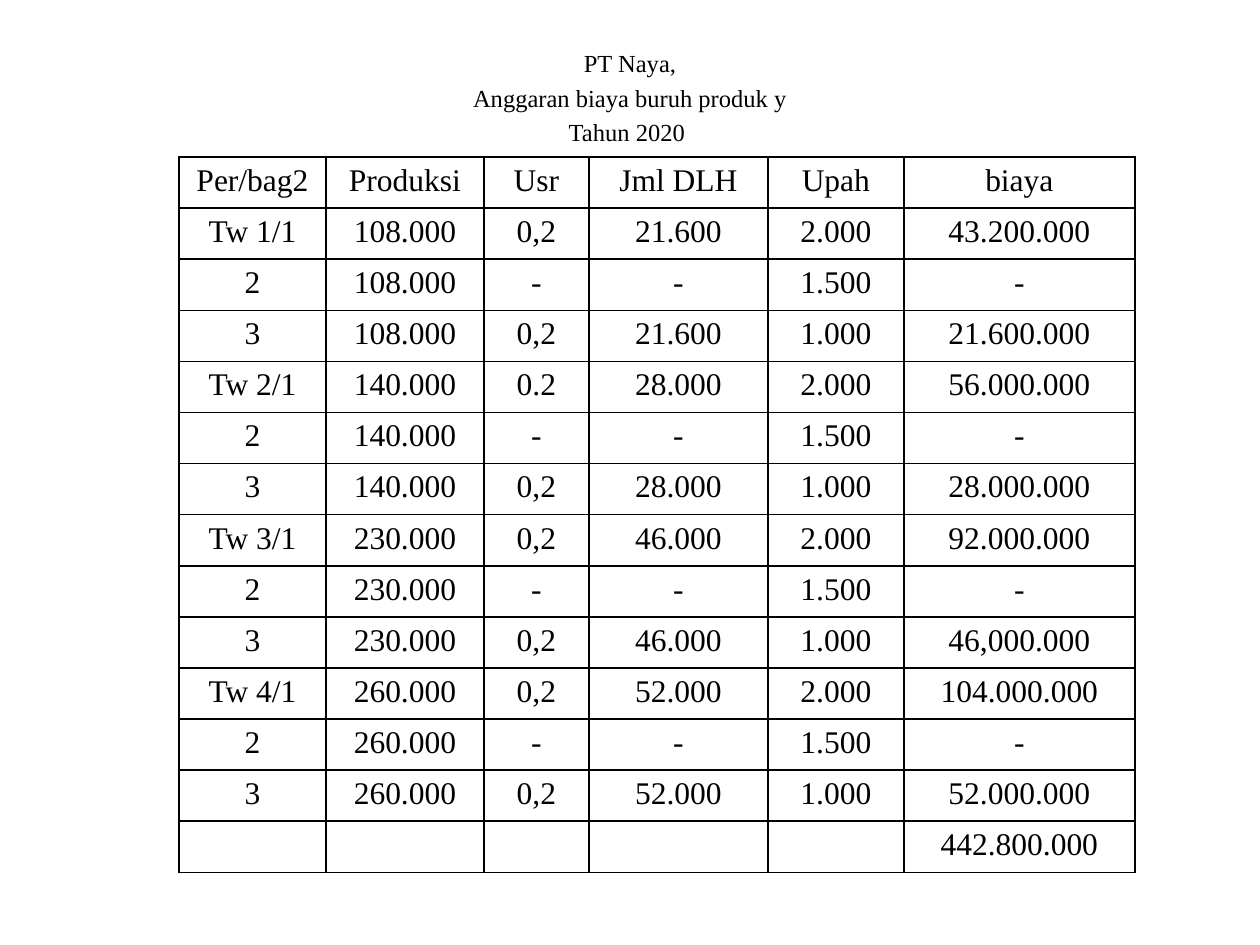
from lxml.etree import SubElement
from pptx import Presentation
from pptx.dml.color import RGBColor
from pptx.enum.text import PP_ALIGN as Align
from pptx.oxml.ns import qn
from pptx.util import Emu, Pt

# Content
HEADING = ["PT Naya,", "Anggaran biaya buruh produk y", "Tahun 2020 "]
ROWS = [
    ("Per/bag2", "Produksi", "Usr", "Jml DLH", "Upah", "biaya"),
    ("Tw 1/1", "108.000", "0,2", "21.600", "2.000", "43.200.000"),
    ("2", "108.000", "-", "-", "1.500", "-"),
    ("3", "108.000", "0,2", "21.600", "1.000", "21.600.000"),
    ("Tw 2/1", "140.000", "0.2", "28.000", "2.000", "56.000.000"),
    ("2", "140.000", "-", "-", "1.500", "-"),
    ("3", "140.000", "0,2", "28.000", "1.000", "28.000.000"),
    ("Tw 3/1", "230.000", "0,2", "46.000", "2.000", "92.000.000"),
    ("2", "230.000", "-", "-", "1.500", "-"),
    ("3", "230.000", "0,2", "46.000", "1.000", "46,000.000"),
    ("Tw 4/1", "260.000", "0,2", "52.000", "2.000", "104.000.000"),
    ("2", "260.000", "-", "-", "1.500", "-"),
    ("3", "260.000", "0,2", "52.000", "1.000", "52.000.000"),
    ("", "", "", "", "", "442.800.000"),
]

# Layout in px, 126 to the inch
COLUMN_WIDTHS = [147, 158, 105, 179, 136, 231]
TABLE_LEFT, TABLE_TOP, TABLE_HEIGHT = 179, 157, 716
FONT, BLACK = "Times New Roman", "000000"


def px(length):
    return Emu(round(length * 914400 / 126))


def color(hex_code):
    return RGBColor.from_string(hex_code)


def style(para, size):
    para.alignment = Align.CENTER
    para.font.name = FONT
    para.font.size = Pt(size)
    para.font.color.rgb = color(BLACK)


def add_borders(cell):
    properties = cell._tc.get_or_add_tcPr()
    for side in ("L", "R", "T", "B"):
        line = SubElement(properties, qn(f"a:ln{side}"), w=str(Pt(1)))
        fill = SubElement(line, qn("a:solidFill"))
        SubElement(fill, qn("a:srgbClr"), val=BLACK)


deck = Presentation()
deck.slide_width, deck.slide_height = px(1260), px(945)
page = deck.slides.add_slide(deck.slide_layouts[1])

# Heading in the body placeholder; the page has no title
title = page.shapes.title
title.element.getparent().remove(title.element)
body = page.placeholders[1]
body.left, body.top, body.width, body.height = px(63), px(42), px(1134), px(803)
body.text_frame.text = "\n".join(HEADING)
for para in body.text_frame.paragraphs:
    style(para, 14)
    SubElement(para._p.get_or_add_pPr(), qn("a:buNone"))
    # The bullet setting has to stand before the default run properties
    para._p.pPr.insert(0, para._p.pPr[-1])

# Budget table
table = page.shapes.add_table(
    len(ROWS), len(COLUMN_WIDTHS), px(TABLE_LEFT), px(TABLE_TOP),
    px(sum(COLUMN_WIDTHS)), px(TABLE_HEIGHT)).table
table.first_row = table.horz_banding = False
for column, width in zip(table.columns, COLUMN_WIDTHS):
    column.width = px(width)
for row, texts in zip(table.rows, ROWS):
    row.height = px(TABLE_HEIGHT / len(ROWS))
    for cell, text in zip(row.cells, texts):
        cell.text = text
        style(cell.text_frame.paragraphs[0], 18)
        add_borders(cell)
        cell.fill.background()

deck.save("out.pptx")
